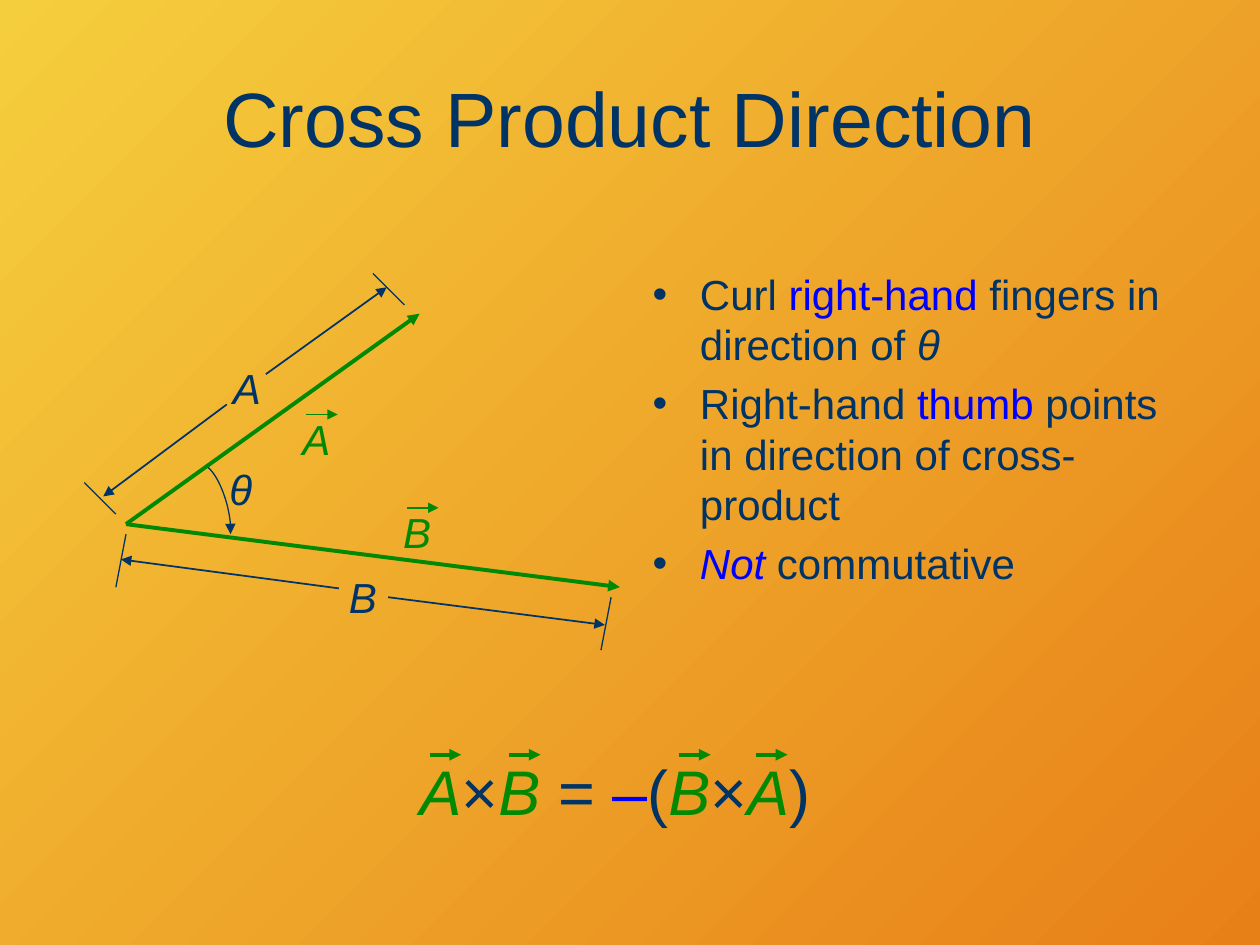
"""Build the slide on the direction of the cross product."""
from dataclasses import dataclass

from lxml import etree
from pptx import Presentation
from pptx.dml.color import RGBColor
from pptx.enum.shapes import MSO_CONNECTOR
from pptx.enum.text import MSO_ANCHOR, MSO_AUTO_SIZE, PP_ALIGN
from pptx.oxml.ns import qn
from pptx.util import Emu, Pt

STRAIGHT = MSO_CONNECTOR.STRAIGHT
MIDDLE, TOP = MSO_ANCHOR.MIDDLE, MSO_ANCHOR.TOP
CENTER, LEFT = PP_ALIGN.CENTER, PP_ALIGN.LEFT
NO_FIT = MSO_AUTO_SIZE.NONE
SCALE = 9144


def px(length):
    """Turn px, at 100 to the inch, into EMU."""
    return Emu(round(length * SCALE))


@dataclass(frozen=True)
class Theme:
    """Colours, font and sizes of the slide."""
    font: str = "Arial"
    ink: str = "003366"
    vector: str = "008901"
    accent: str = "0000FF"
    glow: str = "F5CE3D"
    ember: str = "E88018"
    title: int = 44
    formula: int = 36
    body: int = 24
    bold_line: float = 2.25
    line: float = 1
    thin_line: float = 0.75


class SlideBuilder:
    """Holds the theme, the slide and the shapes being drawn on."""

    def __init__(self, slide, theme):
        """Start drawing on the slide itself."""
        self.slide = slide
        self.theme = theme
        self.canvas = slide.shapes

    def start_group(self):
        """Draw what follows into a new group."""
        self.canvas = self.slide.shapes.add_group_shape().shapes

    def background(self):
        """Fill the background with a diagonal gradient."""
        fill = self.slide.background.fill
        fill.gradient()
        fill.gradient_angle = 315
        for stop, color in zip(fill.gradient_stops, (self.theme.glow, self.theme.ember)):
            stop.color.rgb = RGBColor.from_string(color)

    def add_pieces(self, paragraph, pieces, size, align):
        """Put (text, colour, italic) pieces into a paragraph."""
        paragraph.alignment = align
        for text, color, italic in pieces:
            run = paragraph.add_run()
            run.text = text
            run.font.name = self.theme.font
            run.font.size = Pt(size)
            run.font.italic = italic
            run.font.color.rgb = RGBColor.from_string(color)

    def place(self, holder, box, anchor):
        """Move a placeholder and return its text frame."""
        holder.left, holder.top, holder.width, holder.height = map(px, box)
        frame = holder.text_frame
        frame.auto_size = NO_FIT
        frame.vertical_anchor = anchor
        return frame

    def title(self, text, box):
        """Fill the title placeholder."""
        frame = self.place(self.slide.shapes.title, box, MIDDLE)
        self.add_pieces(frame.paragraphs[0], [(text, self.theme.ink, False)],
                        self.theme.title, CENTER)

    def bullets(self, items, box):
        """Fill the body placeholder with bulleted items."""
        frame = self.place(self.slide.placeholders[1], box, TOP)
        for index, pieces in enumerate(items):
            paragraph = frame.add_paragraph() if index else frame.paragraphs[0]
            self.add_pieces(paragraph, pieces, self.theme.body, LEFT)
            paragraph.space_before = Pt(5)
            properties = paragraph._p.get_or_add_pPr()
            bullet_color = etree.SubElement(properties, qn("a:buClr"))
            etree.SubElement(bullet_color, qn("a:srgbClr"), val=self.theme.ink)

    def text(self, pieces, box, size):
        """Add a centred text box."""
        frame = self.canvas.add_textbox(*map(px, box)).text_frame
        frame.word_wrap = True
        self.add_pieces(frame.paragraphs[0], pieces, size, CENTER)

    def label(self, letter, left, top, color):
        """Add a single italic letter."""
        self.text([(letter, color, True)], (left, top, 42, 50), self.theme.body)

    def stroke(self, line, color, width, arrow):
        """Style a line, with an arrowhead at its end if asked."""
        line.color.rgb = RGBColor.from_string(color)
        line.width = Pt(width)
        if arrow:
            etree.SubElement(line._get_or_add_ln(), qn("a:tailEnd"), type="triangle")

    def line(self, ends, color, width, arrow=False):
        """Add a straight line."""
        connector = self.canvas.add_connector(STRAIGHT, *map(px, ends))
        self.stroke(connector.line, color, width, arrow)
        etree.SubElement(connector._element.spPr, qn("a:effectLst"))

    def vector_mark(self, left, top, width):
        """Add the short arrow that stands over a vector's letter."""
        self.line((left, top, left + 25, top), self.theme.vector, width, arrow=True)

    def curve(self, controls, color, width, steps=24):
        """Add a cubic curve that ends in an arrowhead."""
        points = []
        for step in range(steps + 1):
            t = step / steps
            weights = ((1 - t) ** 3, 3 * t * (1 - t) ** 2, 3 * t * t * (1 - t), t ** 3)
            points.append([px(sum(w * c for w, c in zip(weights, axis))) for axis in zip(*controls)])
        outline = self.canvas.build_freeform(*points[0])
        outline.add_line_segments(points[1:], close=False)
        arc = outline.convert_to_shape()
        arc.fill.background()
        arc.shadow.inherit = False
        self.stroke(arc.line, color, width, arrow=True)


def draw_diagram(builder):
    """Draw the two vectors, their lengths and the angle between them."""
    theme = builder.theme
    builder.start_group()
    for tip in ((333, 249), (492, 466)):
        builder.line((100, 416, *tip), theme.vector, theme.bold_line, arrow=True)
    for letter, left, top in (("A", 230, 323), ("B", 310, 397)):
        builder.label(letter, left, top, theme.vector)
        builder.vector_mark(left + 13, top + 6, theme.line)
    for letter, left, top in (("A", 175, 283), ("B", 267, 449), ("θ", 170, 363)):
        builder.label(letter, left, top, theme.ink)
    for left, top, run, rise in ((100, 424, -8, 42), (485, 474, -8, 42),
                                 (92, 408, -25, -25), (321, 242, -25, -25)):
        builder.line((left, top, left + run, top + rise), theme.ink, theme.thin_line)
    for ends in ((308, 474, 480, 496), (180, 321, 82, 394),
                 (269, 467, 96, 444), (211, 297, 307, 228)):
        builder.line(ends, theme.ink, theme.line, arrow=True)
    builder.curve(((165, 371), (174, 378), (184, 404), (183, 424)), theme.ink, theme.thin_line)


def draw_formula(builder):
    """Set the anticommutative rule with arrows over its vectors."""
    theme = builder.theme
    ink, vector = theme.ink, theme.vector
    builder.start_group()
    pieces = [("A", vector, True), ("×", ink, False), ("B ", vector, True),
              ("= ", ink, False), ("–", theme.accent, False), ("(", ink, False),
              ("B", vector, True), ("×", ink, False), ("A", vector, True), (")", ink, False)]
    builder.text(pieces, (292, 592, 392, 70), theme.formula)
    for left in (341, 404, 539, 600):
        builder.vector_mark(left, 599, theme.bold_line)


def main():
    """Build and save the slide."""
    deck = Presentation()
    deck.slide_width, deck.slide_height = px(1000), px(750)
    theme = Theme()
    ink, accent = theme.ink, theme.accent
    builder = SlideBuilder(deck.slides.add_slide(deck.slide_layouts[1]), theme)
    builder.background()
    builder.title("Cross Product Direction", (50, 30, 900, 125))
    builder.bullets([
        [("Curl ", ink, False), ("right-hand", accent, False),
         (" fingers in direction of ", ink, False), ("θ", ink, True)],
        [("Right-hand ", ink, False), ("thumb", accent, False),
         (" points in direction of cross-product", ink, False)],
        [("Not", accent, True), (" commutative", ink, False)],
    ], (508, 208, 450, 342))
    draw_diagram(builder)
    draw_formula(builder)
    deck.save("out.pptx")


if __name__ == "__main__":
    main()
